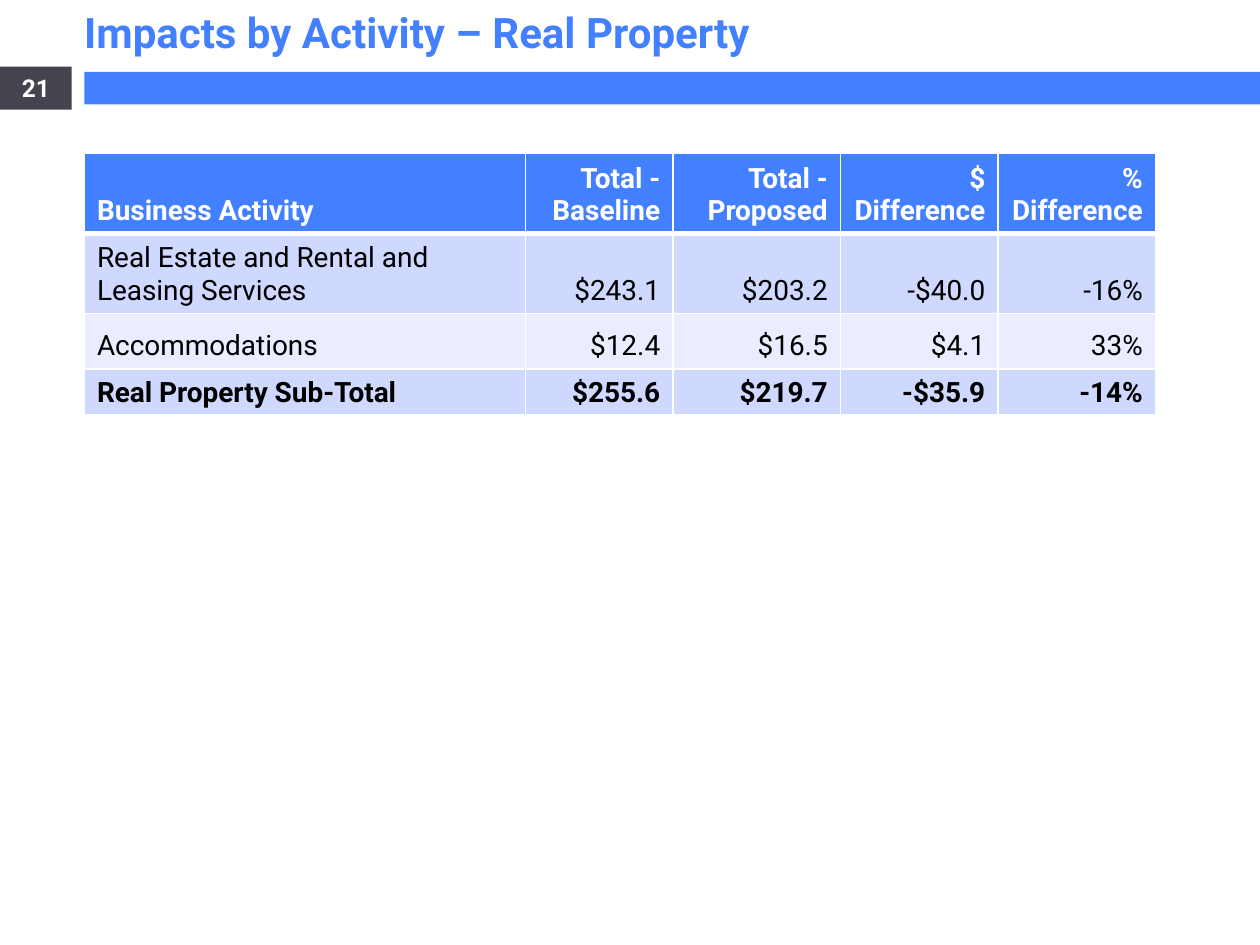
from lxml import etree
from pptx import Presentation
from pptx.dml.color import RGBColor
from pptx.enum import shapes, text
from pptx.oxml.ns import qn
from pptx.util import Inches, Pt

FONT = "Roboto"
COLORS = {"blue": "4280FF", "dark": "43444D", "white": "FFFFFF",
          "black": "000000", "band": "CFD8FF", "light": "E9EDFF"}
TITLE = "Impacts by Activity – Real Property"
PAGE_NUMBER = "21"
ROWS = [
    ("Business Activity", "Total - Baseline", "Total - Proposed", "$ Difference", "% Difference"),
    ("Real Estate and Rental and Leasing Services", "$243.1", "$203.2", "-$40.0", "-16%"),
    ("Accommodations", "$12.4", "$16.5", "$4.1", "33%"),
    ("Real Property Sub-Total", "$255.6", "$219.7", "-$35.9", "-14%"),
]
ROW_STYLES = [("blue", "white", True), ("band", "black", False),
              ("light", "black", False), ("band", "black", True)]
COLUMN_WIDTHS = [3.5, 1.17, 1.33, 1.25, 1.25]
ROW_HEIGHTS = [0.54, 0.39, 0.44, 0.33]
TABLE_BOX = (0.67, 1.22, 8.5, 2.07)


def rgb(name):
    return RGBColor.from_string(COLORS[name])


def write(frame, content, size, color, bold, align):
    frame.word_wrap = True
    paragraph = frame.paragraphs[0]
    paragraph.alignment = align
    run = paragraph.add_run()
    run.text = content
    run.font.name = FONT
    run.font.size = Pt(size)
    run.font.bold = bold
    run.font.color.rgb = rgb(color)


def add_bar(slide, box, color):
    bar = slide.shapes.add_shape(shapes.MSO_SHAPE.RECTANGLE, *map(Inches, box))
    bar.shadow.inherit = False
    bar.fill.solid()
    bar.fill.fore_color.rgb = rgb(color)
    bar.line.fill.background()
    return bar


def set_borders(cell, top, bottom):
    properties = cell._tc.get_or_add_tcPr()
    widths = {"a:lnL": 1, "a:lnR": 1, "a:lnT": top, "a:lnB": bottom}
    for position, (tag, width) in enumerate(widths.items()):
        line = etree.Element(qn(tag), w=str(Pt(width)))
        fill = etree.SubElement(line, qn("a:solidFill"))
        etree.SubElement(fill, qn("a:srgbClr"), val=COLORS["white"])
        properties.insert(position, line)


def add_impacts_table(slide):
    frame = slide.shapes.add_table(len(ROWS), len(COLUMN_WIDTHS), *map(Inches, TABLE_BOX))
    table = frame.table
    for column, width in zip(table.columns, COLUMN_WIDTHS):
        column.width = Inches(width)
    for row, height in zip(table.rows, ROW_HEIGHTS):
        row.height = Inches(height)
    frame.height = Inches(TABLE_BOX[3])
    for r, (values, (fill, color, bold)) in enumerate(zip(ROWS, ROW_STYLES)):
        for c, value in enumerate(values):
            cell = table.cell(r, c)
            cell.fill.solid()
            cell.fill.fore_color.rgb = rgb(fill)
            cell.vertical_anchor = text.MSO_ANCHOR.BOTTOM
            align = text.PP_ALIGN.RIGHT if c else text.PP_ALIGN.LEFT
            write(cell.text_frame, value, 16, color, bold, align)
            set_borders(cell, top=3 if r == 1 else 1, bottom=3 if r == 0 else 1)


def main():
    presentation = Presentation()
    presentation.slide_width = Inches(10)
    presentation.slide_height = Inches(7.5)
    slide = presentation.slides.add_slide(presentation.slide_layouts[6])

    add_bar(slide, (0.67, 0.57, 9.33, 0.26), "blue")
    number = add_bar(slide, (0, 0.53, 0.57, 0.34), "dark")
    write(number.text_frame, PAGE_NUMBER, 14, "white", True, text.PP_ALIGN.CENTER)
    title = slide.shapes.add_textbox(*map(Inches, (0.57, 0, 9.43, 0.5)))
    write(title.text_frame, TITLE, 24, "blue", True, text.PP_ALIGN.LEFT)
    add_impacts_table(slide)

    presentation.save("out.pptx")


if __name__ == "__main__":
    main()
